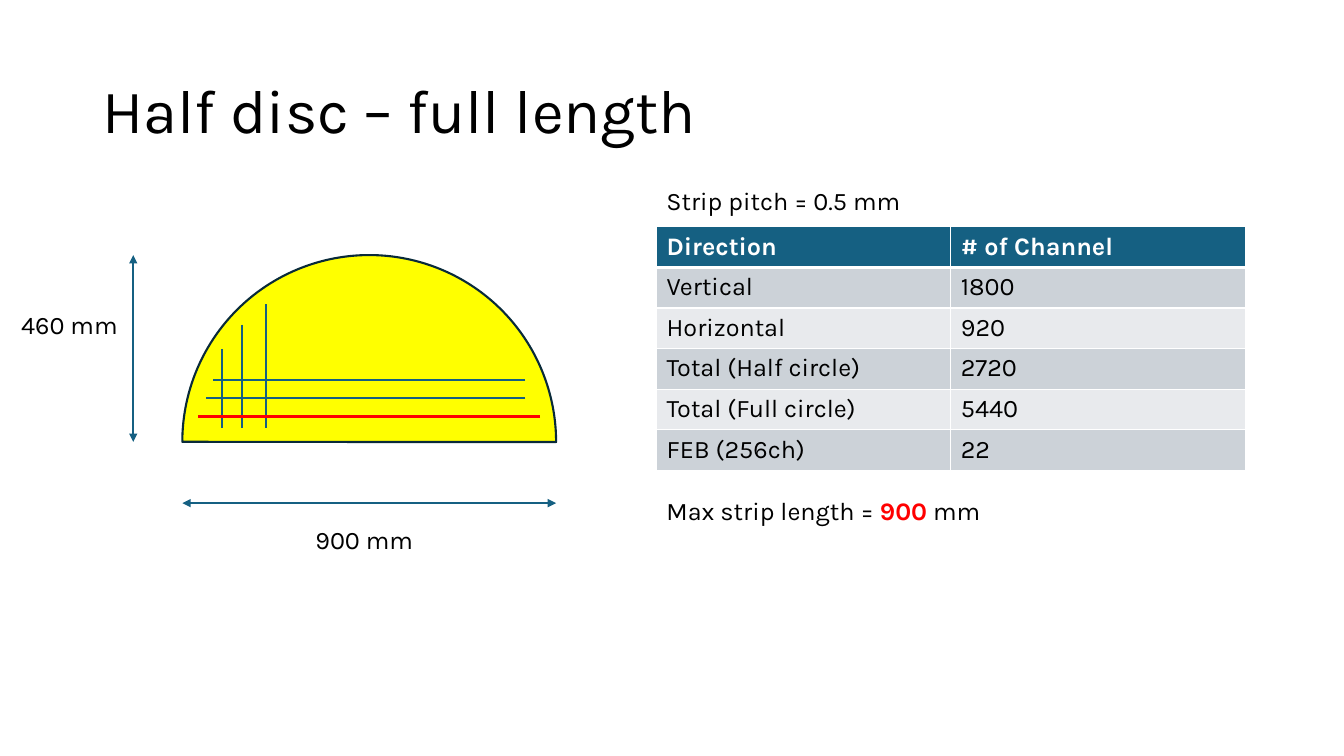
from lxml.etree import SubElement
from pptx import Presentation
from pptx.dml.color import RGBColor
from pptx.enum.shapes import MSO_CONNECTOR, MSO_SHAPE
from pptx.enum.text import MSO_ANCHOR
from pptx.oxml import parse_xml
from pptx.oxml.ns import nsdecls, qn
from pptx.util import Pt

FONT = "Karla"
HUES = {"black": "000000", "white": "FFFFFF", "teal": "156082", "navy": "092A39",
        "yellow": "FFFF00", "red": "FF0000", "dark": "CCD2D8", "light": "E8EAED"}
ROWS = [("Direction", "# of Channel"), ("Vertical", "1800"), ("Horizontal", "920"),
        ("Total (Half circle)", "2720"), ("Total (Full circle)", "5440"),
        ("FEB (256ch)", "22")]


def hue(name):
    return RGBColor.from_string(HUES[name])


def add_run(para, text, size=18, color="black", bold=False):
    run = para.add_run()
    run.text = text
    font = run.font
    font.name, font.size, font.bold = FONT, Pt(size), bold
    font.color.rgb = hue(color)


def add_text(slide, box, runs, size=18):
    frame = slide.shapes.add_textbox(*map(Pt, box)).text_frame
    frame.word_wrap = True
    for text, color, bold in runs:
        add_run(frame.paragraphs[0], text, size, color, bold)
    return frame


def add_line(slide, x1, y1, x2, y2, color="teal", arrows=False):
    line = slide.shapes.add_connector(MSO_CONNECTOR.STRAIGHT, *map(Pt, (x1, y1, x2, y2)))
    line.line.color.rgb = hue(color)
    line.line.width = Pt(1.5)
    if arrows:
        for end in ("a:headEnd", "a:tailEnd"):
            SubElement(line.line._get_or_add_ln(), qn(end), type="triangle")
    SubElement(line._element.spPr, qn("a:effectLst"))


def add_title(slide, box):
    frame = add_text(slide, box, [("Half disc – full length", "black", False)], 44)
    frame.vertical_anchor = MSO_ANCHOR.MIDDLE
    frame.paragraphs[0].line_spacing = 0.9


def add_disc(slide, left, top, size):
    base = top + size / 2
    # Half disc: a left half pie turned upright
    disc = slide.shapes.add_shape(MSO_SHAPE.PIE, *map(Pt, (left, top, size, size)))
    disc.adjustments[0], disc.adjustments[1] = 54.034, 162
    disc.rotation = 90
    disc.shadow.inherit = False
    disc.fill.solid()
    disc.fill.fore_color.rgb = hue("yellow")
    disc.line.color.rgb = hue("navy")
    disc.line.width = Pt(1.5)

    # Width and height measures
    add_line(slide, left, base + 43.7, left + size, base + 43.7, arrows=True)
    add_text(slide, (left + 88, base + 55.2, 101, 29), [("900 mm", "black", False)])
    add_line(slide, left - 35, base, left - 35, top, arrows=True)
    add_text(slide, (left - 122.2, top + 35.3, 101, 29), [("460 mm", "black", False)])

    # Vertical strips
    for x, y in ((28.4, 67), (42.6, 49.7), (60, 35.3)):
        add_line(slide, left + x, top + y, left + x, base - 10.3)
    # Horizontal strips
    for x1, x2, rise, color in ((11, 255.7, 18.2, "red"), (16.7, 245, 31.2, "teal"),
                                (22, 245, 44.1, "teal")):
        add_line(slide, left + x2, base - rise, left + x1, base - rise, color)


def set_edges(cell, row):
    props = cell._tc.get_or_add_tcPr()
    thick = {"T": 3 if row == 1 else 1, "B": 3 if row == 0 else 1}
    for spot, side in enumerate("LRTB"):
        props.insert(spot, parse_xml(
            f'<a:ln{side} {nsdecls("a")} w="{Pt(thick.get(side, 1))}"><a:solidFill>'
            f'<a:srgbClr val="{HUES["white"]}"/></a:solidFill></a:ln{side}>'))


def add_counts(slide, left, top, width):
    high = 29
    add_text(slide, (left, top - 33, 241, high),
             [("Strip pitch = 0.5 mm", "black", False)])
    # Channel table
    table = slide.shapes.add_table(
        len(ROWS), 2, *map(Pt, (left, top, width, high * len(ROWS)))).table
    for r, texts in enumerate(ROWS):
        table.rows[r].height = Pt(high)
        fill = "teal" if r == 0 else "dark" if r % 2 else "light"
        for c, text in enumerate(texts):
            cell = table.cell(r, c)
            cell.fill.solid()
            cell.fill.fore_color.rgb = hue(fill)
            set_edges(cell, r)
            add_run(cell.text_frame.paragraphs[0], text,
                    color="black" if r else "white", bold=r == 0)
    add_text(slide, (left, top + 188, 241, high),
             [("Max strip length = ", "black", False), ("900", "red", True),
              (" mm", "black", False)])


def main():
    deck = Presentation()
    deck.slide_width, deck.slide_height = Pt(960), Pt(540)
    slide = deck.slides.add_slide(deck.slide_layouts[6])
    add_title(slide, (66, 28.75, 828, 104.4))
    add_disc(slide, 130.2, 182.2, 267)
    add_counts(slide, 469, 162, 420.4)
    deck.save("out.pptx")


if __name__ == "__main__":
    main()
